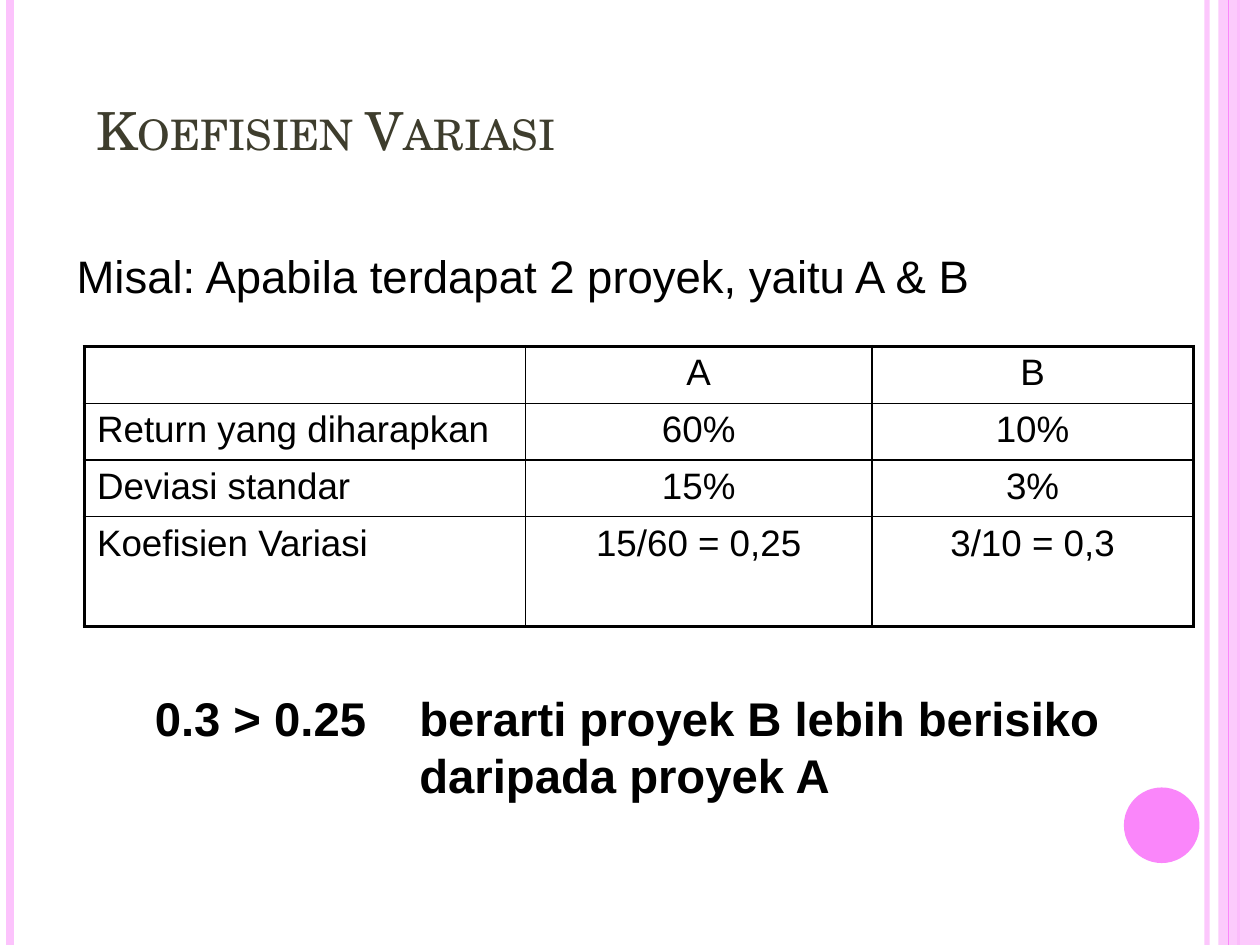
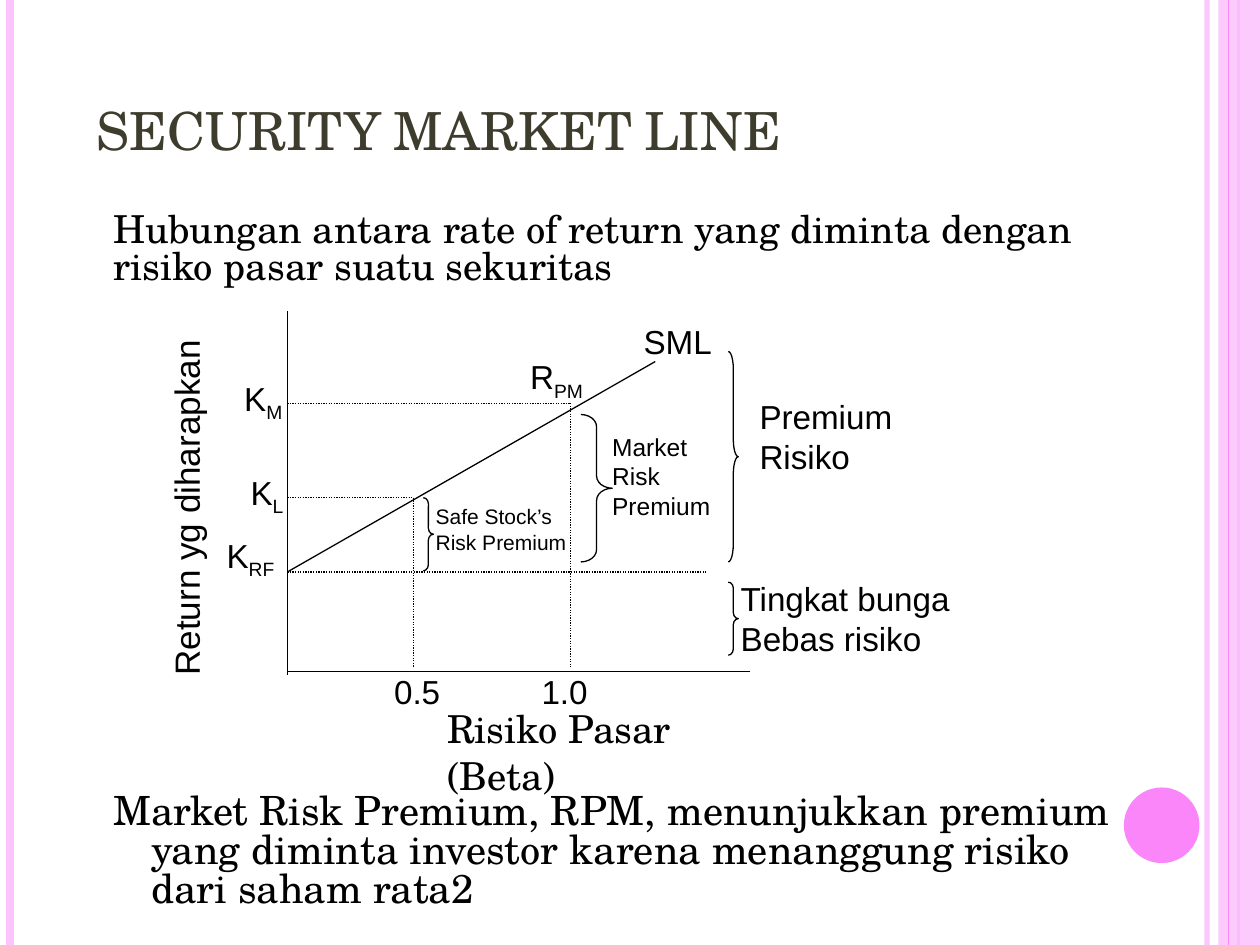
"""Build two slides on the coefficient of variation and the security market line."""
from dataclasses import dataclass
from typing import Optional

from lxml import etree
from pptx import Presentation
from pptx.dml.color import RGBColor
from pptx.enum import dml, shapes, text
from pptx.oxml.ns import qn
from pptx.util import Inches, Pt

BLACK = RGBColor(0x00, 0x00, 0x00)
OLIVE = RGBColor(0x3E, 0x3D, 0x2D)
PALE_PINK = RGBColor(0xFC, 0xC3, 0xFC)
PINK = RGBColor(0xFA, 0x86, 0xFA)
SANS = "Arial"
SERIF = "TeX Gyre Schola"
THIN, THICK = 1, 2.25


@dataclass(frozen=True)
class Line:
    x1: float
    y1: float
    x2: float
    y2: float
    color: RGBColor = BLACK
    width: float = 0.75
    dotted: bool = False
    opacity: int = 100


@dataclass(frozen=True)
class Label:
    left: float
    top: float
    width: float
    height: float
    words: str
    size: float = 19
    font: str = SANS
    color: RGBColor = BLACK
    subscript: str = ""
    bold: bool = False
    small_caps: bool = False
    wrap: bool = False
    grow: bool = True
    rotation: float = 0
    margin: float = 0
    indent: float = 0
    line_spacing: Optional[float] = None
    space_before: float = 0


@dataclass(frozen=True)
class Brace:
    left: float
    top: float
    width: float
    height: float


EDGE_LINES = [
    Line(9.58, 0, 9.58, 7.5, PALE_PINK, 3, opacity=93),
    Line(0.08, 0, 0.08, 7.5, PALE_PINK, 4.5),
    Line(9.83, 0, 9.83, 7.5, PINK, 1.5),
]
BAND_LINE = Line(9.75, 0, 9.75, 7.5, PINK)

PROJECT_LABELS = [
    Label(0.51, 1.92, 8.56, 0.54, "Misal: Apabila terdapat 2 proyek, yaitu A & B", 26, wrap=True),
    Label(0.48, 5.42, 8.99, 1.03, "0.3 > 0.25\tberarti proyek B lebih berisiko daripada proyek A",
          27, bold=True, wrap=True, margin=2.75, indent=-2.1),
]
PROJECT_COLUMNS = [3.5, 2.75, 2.55]
PROJECT_HEIGHTS = [0.45, 0.45, 0.45, 0.87]
PROJECT_ROWS = [
    ("", "A", "B"),
    ("Return yang diharapkan", "60%", "10%"),
    ("Deviasi standar", "15%", "3%"),
    ("Koefisien Variasi", "15/60 = 0,25", "3/10 = 0,3"),
]

AXIS_X, AXIS_Y, GUIDE_END = 2.28, 5.33, 5.29
BETA_LOW, BETA_MARKET = 3.28, 4.53
K_MARKET, K_LOW, K_RISK_FREE = 3.2, 3.95, 4.54
MARKET_LINES = [
    Line(AXIS_X, 2.47, AXIS_X, 5.36),
    Line(AXIS_X, AXIS_Y, 5.95, AXIS_Y),
    Line(AXIS_X, K_RISK_FREE, 5.2, 2.87),
    Line(AXIS_X, K_RISK_FREE, 5.61, K_RISK_FREE, dotted=True),
]
for beta, rate in ((BETA_LOW, K_LOW), (BETA_MARKET, K_MARKET)):
    MARKET_LINES += [
        Line(AXIS_X, rate, beta, rate, dotted=True),
        Line(beta, rate, beta, GUIDE_END, dotted=True),
    ]
MARKET_BRACES = [
    Brace(5.78, 2.79, 0.08, 1.67),
    Brace(5.78, 4.62, 0.08, 0.58),
    Brace(3.36, 3.95, 0.08, 0.58),
    Brace(4.61, 3.29, 0.25, 1.17),
]
MARKET_LABELS = [
    Label(0.8, 1.65, 8.34, 0.7,
          "Hubungan antara rate of return yang diminta dengan risiko pasar suatu sekuritas",
          22, SERIF, wrap=True, line_spacing=0.8, space_before=4.4),
    Label(0.8, 6.26, 8.42, 0.85,
          "Market Risk Premium, RPM, menunjukkan premium yang diminta investor "
          "karena menanggung risiko dari saham rata2",
          23, SERIF, wrap=True, grow=False, margin=0.3, indent=-0.3,
          line_spacing=0.8, space_before=6),
    Label(3.45, 5.55, 2.47, 0.47, "Risiko Pasar (Beta)", 22, SERIF, wrap=True),
    Label(0.02, 3.78, 2.92, 0.44, "Return yg diharapkan", 20, wrap=True, rotation=270),
    Label(3.03, 5.28, 0.57, 0.42, "0.5"),
    Label(4.2, 5.28, 0.57, 0.42, "1.0"),
    Label(1.7, 4.2, 0.62, 0.42, "K", subscript="RF"),
    Label(1.84, 2.95, 0.53, 0.42, "K", subscript="M"),
    Label(1.89, 3.7, 0.48, 0.42, "K", subscript="L"),
    Label(4.11, 2.78, 0.66, 0.42, "R", subscript="PM"),
    Label(5.01, 2.5, 0.74, 0.42, "SML"),
    Label(5.93, 3.1, 1.26, 0.73, "Premium\nRisiko"),
    Label(5.78, 4.54, 1.88, 0.73, "Tingkat bunga\nBebas risiko"),
    Label(3.36, 3.95, 1.24, 0.5, "Safe Stock’s\nRisk Premium", 12),
    Label(4.76, 3.38, 0.98, 0.8, "Market\nRisk\nPremium", 14),
]


def set_opacity(shape, percent: int) -> None:
    """Make the colours of a shape partly transparent."""
    for color in list(shape._element.spPr.iter(qn("a:srgbClr"))):
        etree.SubElement(color, qn("a:alpha"), val=str(percent * 1000))


def draw_line(slide, line: Line) -> None:
    """Draw a straight line without a shadow."""
    connector = slide.shapes.add_connector(
        shapes.MSO_CONNECTOR.STRAIGHT,
        Inches(line.x1), Inches(line.y1), Inches(line.x2), Inches(line.y2))
    connector.line.color.rgb = line.color
    connector.line.width = Pt(line.width)
    if line.dotted:
        connector.line.dash_style = dml.MSO_LINE.ROUND_DOT
    if line.opacity < 100:
        set_opacity(connector, line.opacity)
    etree.SubElement(connector._element.spPr, qn("a:effectLst"))


def draw_solid(slide, preset, left: float, top: float, width: float, height: float,
               color: RGBColor):
    """Draw a filled shape without an outline and return it."""
    shape = slide.shapes.add_shape(
        preset, Inches(left), Inches(top), Inches(width), Inches(height))
    shape.shadow.inherit = False
    shape.fill.solid()
    shape.fill.fore_color.rgb = color
    shape.line.fill.background()
    return shape


def draw_brace(slide, brace: Brace) -> None:
    """Draw a right brace whose curl is a twelfth of its height."""
    shape = slide.shapes.add_shape(
        shapes.MSO_SHAPE.RIGHT_BRACE, Inches(brace.left), Inches(brace.top),
        Inches(brace.width), Inches(brace.height))
    shape.adjustments[0] = brace.height / brace.width / 12
    shape.shadow.inherit = False
    shape.fill.background()
    shape.line.color.rgb = BLACK
    shape.line.width = Pt(0.75)


def format_run(run, size: float, font: str = SANS, color: RGBColor = BLACK) -> None:
    """Set the size, typeface and colour of a run."""
    run.font.size = Pt(size)
    run.font.name = font
    run.font.color.rgb = color


def draw_label(slide, label: Label):
    """Draw a text box and return it."""
    shape = slide.shapes.add_textbox(
        Inches(label.left), Inches(label.top), Inches(label.width), Inches(label.height))
    shape.rotation = label.rotation
    frame = shape.text_frame
    frame.word_wrap = label.wrap
    if label.grow:
        frame.auto_size = text.MSO_AUTO_SIZE.SHAPE_TO_FIT_TEXT
    frame.text = label.words
    if label.subscript:
        run = frame.paragraphs[0].add_run()
        run.text = label.subscript
        run.font._element.set("baseline", "-25000")
    for paragraph in frame.paragraphs:
        paragraph.space_before = Pt(label.space_before)
        if label.line_spacing:
            paragraph.line_spacing = label.line_spacing
        if label.indent:
            properties = paragraph._p.get_or_add_pPr()
            properties.set("marL", str(Inches(label.margin)))
            properties.set("indent", str(Inches(label.indent)))
        for run in paragraph.runs:
            format_run(run, label.size, label.font, label.color)
            run.font.bold = label.bold
            if label.small_caps:
                run.font._element.set("cap", "small")
    return shape


def add_titled_slide(presentation, title: str):
    """Add a slide with the pink edges, the circle and a title."""
    slide = presentation.slides.add_slide(presentation.slide_layouts[6])
    for line in EDGE_LINES:
        draw_line(slide, line)
    band = draw_solid(slide, shapes.MSO_SHAPE.RECTANGLE, 9.67, 0, 0.33, 7.5, PALE_PINK)
    set_opacity(band, 87)
    draw_line(slide, BAND_LINE)
    draw_solid(slide, shapes.MSO_SHAPE.OVAL, 8.92, 6.25, 0.6, 0.6, PINK)
    heading = draw_label(slide, Label(
        0.67, 0.25, 8.92, 1.08, title, 30, SERIF, OLIVE,
        small_caps=True, wrap=True, grow=False))
    heading.text_frame.vertical_anchor = text.MSO_ANCHOR.BOTTOM
    return slide


def set_borders(cell, widths: dict[str, float]) -> None:
    """Draw black borders of the given widths around a cell."""
    properties = cell._tc.get_or_add_tcPr()
    for side, width in widths.items():
        border = etree.SubElement(properties, qn(f"a:ln{side}"), w=str(Pt(width)))
        fill = etree.SubElement(border, qn("a:solidFill"))
        etree.SubElement(fill, qn("a:srgbClr"), val=str(BLACK))


def draw_project_table(slide) -> None:
    """Draw the comparison of projects A and B with a thick outer frame."""
    last_row, last_column = len(PROJECT_ROWS) - 1, len(PROJECT_COLUMNS) - 1
    table = slide.shapes.add_table(
        last_row + 1, last_column + 1, Inches(0.67), Inches(2.75),
        Inches(sum(PROJECT_COLUMNS)), Inches(sum(PROJECT_HEIGHTS))).table
    table.first_row = table.horz_banding = False
    for column, width in zip(table.columns, PROJECT_COLUMNS):
        column.width = Inches(width)
    for row_index, values in enumerate(PROJECT_ROWS):
        table.rows[row_index].height = Inches(PROJECT_HEIGHTS[row_index])
        for column_index, value in enumerate(values):
            cell = table.cell(row_index, column_index)
            set_borders(cell, {
                "L": THICK if column_index == 0 else THIN,
                "R": THICK if column_index == last_column else THIN,
                "T": THICK if row_index == 0 else THIN,
                "B": THICK if row_index == last_row else THIN,
            })
            cell.fill.background()
            cell.text_frame.text = value
            paragraph = cell.text_frame.paragraphs[0]
            if column_index:
                paragraph.alignment = text.PP_ALIGN.CENTER
            for run in paragraph.runs:
                format_run(run, 21)


def main() -> None:
    """Build and save the presentation."""
    presentation = Presentation()
    presentation.slide_width, presentation.slide_height = Inches(10), Inches(7.5)

    variation = add_titled_slide(presentation, "Koefisien Variasi")
    draw_project_table(variation)
    for label in PROJECT_LABELS:
        draw_label(variation, label)

    market = add_titled_slide(presentation, "SECURITY MARKET LINE")
    for line in MARKET_LINES:
        draw_line(market, line)
    for brace in MARKET_BRACES:
        draw_brace(market, brace)
    for label in MARKET_LABELS:
        draw_label(market, label)

    presentation.save("out.pptx")


if __name__ == "__main__":
    main()
